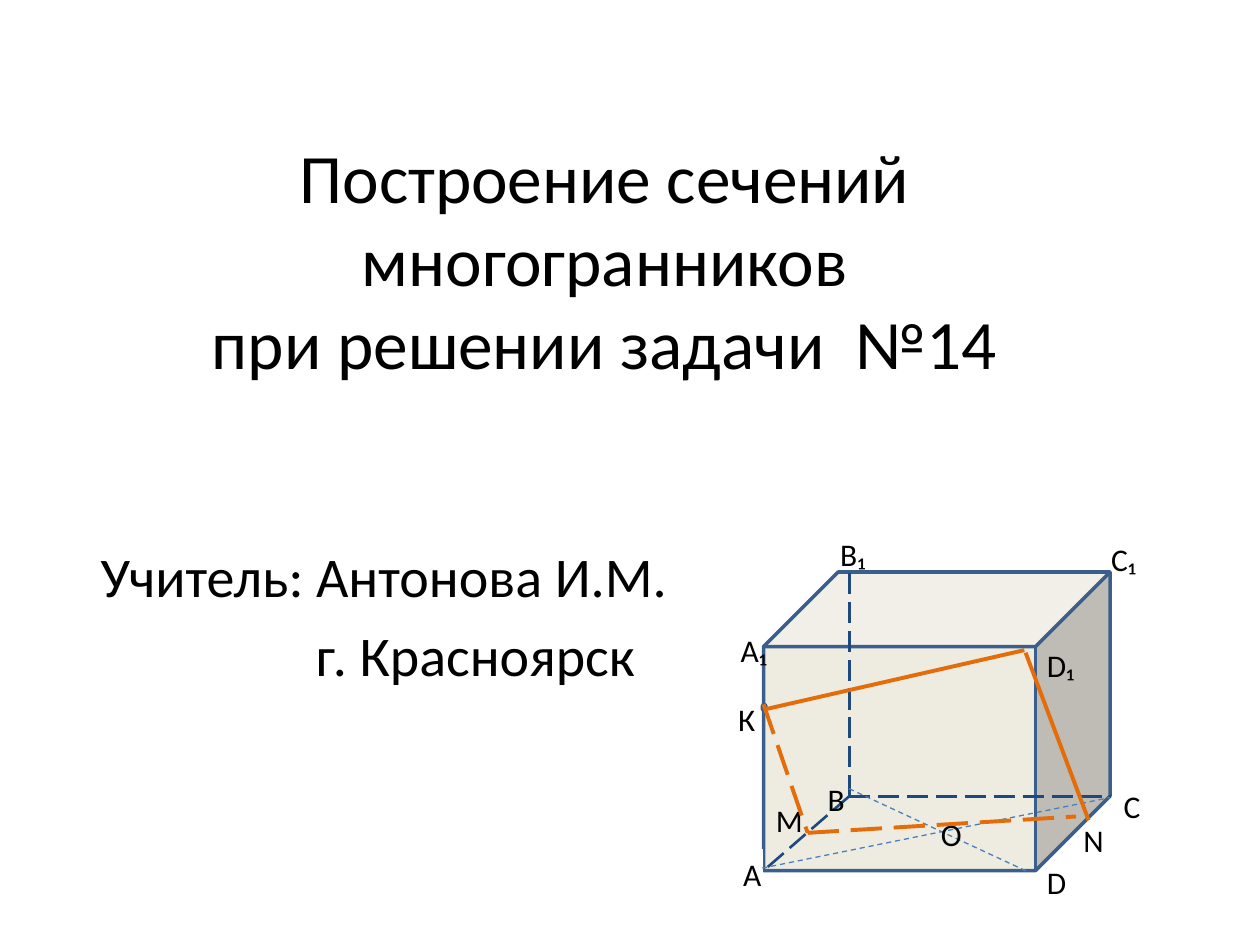
from lxml import etree
from pptx import Presentation
from pptx.dml.color import RGBColor
from pptx.enum.dml import MSO_LINE
from pptx.enum.shapes import MSO_CONNECTOR, MSO_SHAPE
from pptx.enum.text import MSO_ANCHOR, PP_ALIGN
from pptx.oxml.ns import qn
from pptx.util import Inches, Pt

LEFT, CENTER = PP_ALIGN.LEFT, PP_ALIGN.CENTER
TOP, MIDDLE = MSO_ANCHOR.TOP, MSO_ANCHOR.MIDDLE
CUBE, OVAL, RECTANGLE = MSO_SHAPE.CUBE, MSO_SHAPE.OVAL, MSO_SHAPE.RECTANGLE
STRAIGHT = MSO_CONNECTOR.STRAIGHT
DASH, LONG_DASH = MSO_LINE.DASH, MSO_LINE.LONG_DASH

BLACK, WHITE = "000000", "FFFFFF"
FACE, OUTLINE, POINT = "EEECE1", "3A5F8C", "4F81BD"
HIDDEN, DIAGONAL, SECTION = "1F497D", "4B7EBC", "E46C0A"


def color(value):
    return RGBColor.from_string(value)


class GeometrySlide:
    font = "Calibri"
    columns = 100

    def __init__(self, presentation):
        self.unit = presentation.slide_width / self.columns
        self.slide = presentation.slides.add_slide(presentation.slide_layouts[6])

    def grid(self, *lengths):
        return [round(length * self.unit) for length in lengths]

    def text(self, box, lines, size, align=LEFT, anchor=TOP, space=0):
        shape = self.slide.shapes.add_textbox(*self.grid(*box))
        frame = shape.text_frame
        frame.word_wrap = True
        frame.vertical_anchor = anchor
        frame.text = "\n".join(lines)
        for paragraph in frame.paragraphs:
            paragraph.alignment = align
            paragraph.space_before = Pt(space)
            for run in paragraph.runs:
                run.font.name = self.font
                run.font.size = Pt(size)
                run.font.color.rgb = color(BLACK)
        return frame

    def indent(self, paragraph, length):
        properties = paragraph._p.get_or_add_pPr()
        properties.set("marL", str(self.grid(length)[0]))

    def shape(self, kind, box, fill, outline, width):
        shape = self.slide.shapes.add_shape(kind, *self.grid(*box))
        shape.shadow.inherit = False
        shape.fill.solid()
        shape.fill.fore_color.rgb = color(fill)
        shape.line.color.rgb = color(outline)
        shape.line.width = Pt(width)

    def line(self, start, end, stroke, width, dash=None):
        connector = self.slide.shapes.add_connector(STRAIGHT, *self.grid(*start, *end))
        connector.line.color.rgb = color(stroke)
        connector.line.width = Pt(width)
        if dash is not None:
            connector.line.dash_style = dash
        etree.SubElement(connector._element.spPr, qn("a:effectLst"))

    def label(self, name, left, top, width=6, height=3):
        self.text((left, top, width, height), [name], 18)


def main():
    presentation = Presentation()
    presentation.slide_width = Inches(10)
    presentation.slide_height = Inches(7.5)
    page = GeometrySlide(presentation)

    title = ["Построение сечений многогранников\vпри решении задачи  №14"]
    page.text((5.5, 12.5, 85, 16.1), title, 39.6, CENTER, MIDDLE)
    author = ["Учитель: Антонова И.М.", "г. Красноярск"]
    frame = page.text((7, 42.5, 78, 19.2), author, 32, space=6.4)
    page.indent(frame.paragraphs[1], 17.1)

    page.shape(CUBE, (60.6, 45.4, 27.5, 23.7), FACE, OUTLINE, 2)
    vertex_b = (67.4, 63.2)
    for end in [(67.4, 45.4), (88.2, 63.2), (60.6, 69.1)]:
        page.line(vertex_b, end, HIDDEN, 1.5, LONG_DASH)
    page.shape(RECTANGLE, (58, 67.4, 2.5, 3.7), WHITE, WHITE, 0.75)
    page.shape(OVAL, (60.5, 55.9, 0.3, 0.5), POINT, OUTLINE, 2)
    page.line((67.4, 62.6), (81.6, 69.2), DIAGONAL, 0.75, DASH)
    page.line((60.5, 68.9), (88.1, 63.3), DIAGONAL, 0.75, DASH)

    labels = [
        ("A", 58, 67.4), ("А₁", 57.8, 49.6), ("C₁", 87.2, 42.4),
        ("С", 88.2, 62), ("B₁", 65.7, 42), ("B", 64.7, 61.4),
        ("D", 82.1, 68), ("D₁", 82.1, 50.8), ("К", 57.6, 55.1),
        ("О", 73.7, 64.2), ("M", 60.6, 63.1), ("N", 85, 64.7),
    ]
    for name, left, top in labels:
        page.label(name, left, top)

    point_m = (64.1, 66.1)
    page.line((60.6, 55.9), point_m, SECTION, 2.25, LONG_DASH)
    page.line(point_m, (85.4, 64.8), SECTION, 2.25, LONG_DASH)
    page.line((81.4, 51.8), (86.4, 65.1), SECTION, 2.25)
    page.line((60.7, 56.3), (81.3, 51.6), SECTION, 2.25)

    presentation.save("out.pptx")


if __name__ == "__main__":
    main()
